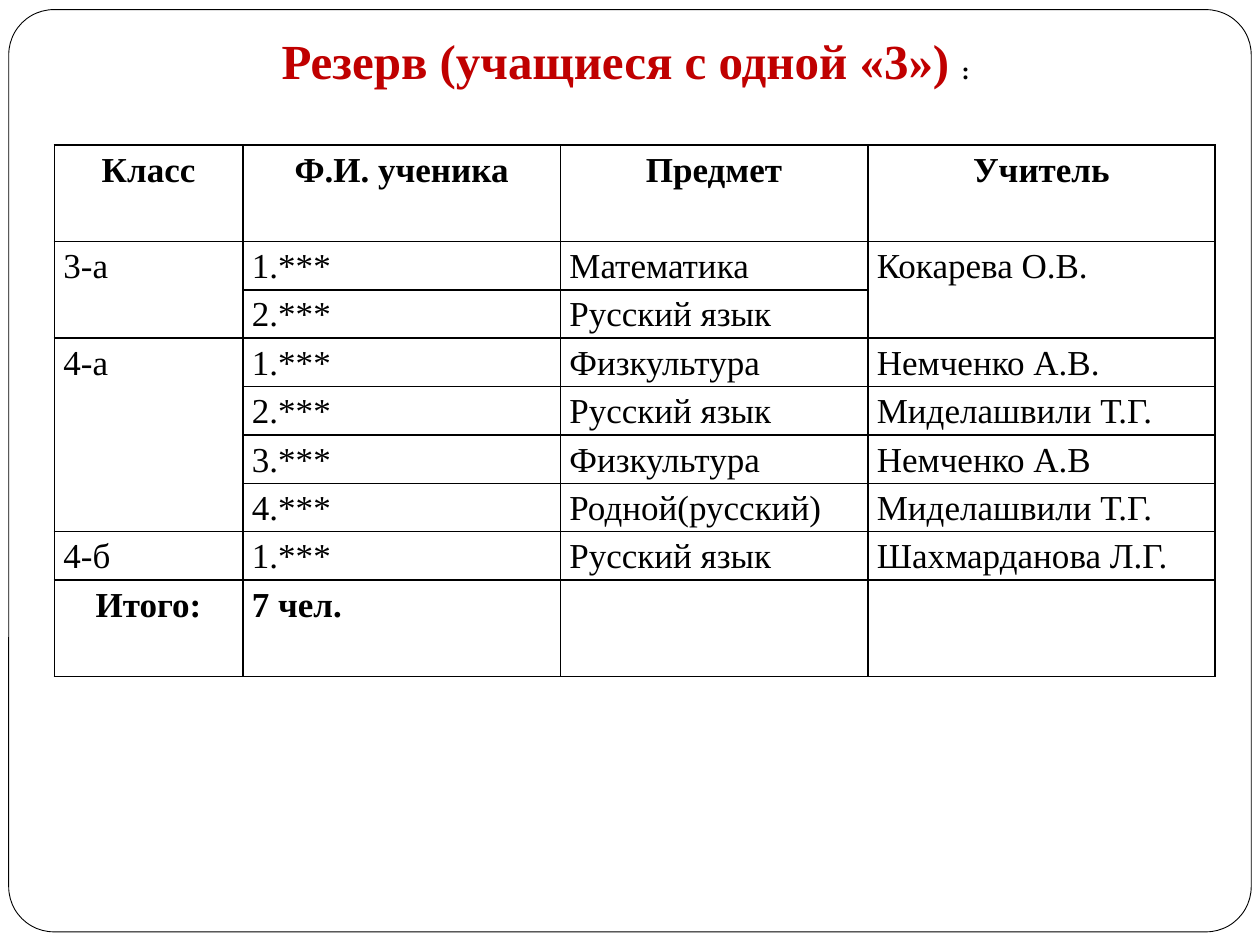
from typing import NamedTuple

from lxml import etree
from pptx import Presentation
from pptx import util as u
from pptx.dml.color import RGBColor
from pptx.enum import shapes, text
from pptx.oxml.ns import qn

FONT = "Times New Roman"
COLORS = {"ink": "000000", "title": "C00000", "paper": "FFFFFF"}
COL_WIDTHS = (107.8, 181.4, 175.7, 198.5)
ROW_H, TALL_ROW_H = 27.65, 55.2


class Row(NamedTuple):
    group: str
    pupil: str
    subject: str
    teacher: str
    bold: bool = False


class Span(NamedTuple):
    col: int
    first: int
    last: int


ROWS = (
    Row("Класс", "Ф.И. ученика", "Предмет", "Учитель", bold=True),
    Row("3-а", "1.***", "Математика", "Кокарева О.В."),
    Row("", "2.***", "Русский язык", ""),
    Row("4-а", "1.***", "Физкультура", "Немченко А.В."),
    Row("", "2.***", "Русский язык", "Миделашвили Т.Г."),
    Row("", "3.***", "Физкультура", "Немченко А.В"),
    Row("", "4.***", "Родной(русский)", "Миделашвили Т.Г."),
    Row("4-б", "1.***", "Русский язык", "Шахмарданова Л.Г."),
    Row("Итого:", "7 чел.", "", "", bold=True),
)
SPANS = (Span(0, 1, 2), Span(3, 1, 2), Span(0, 3, 6))


def rgb(name: str) -> RGBColor:
    return RGBColor.from_string(COLORS[name])


def add_run(p, content: str, size: float = 20, bold: bool = False, color: str = "ink") -> None:
    r = p.add_run()
    r.text = content
    r.font.name = FONT
    r.font.size = u.Pt(size)
    r.font.bold = bold
    r.font.color.rgb = rgb(color)


def add_borders(cell, width: float = 1) -> None:
    tc_pr = cell._tc.get_or_add_tcPr()
    for side in ("a:lnL", "a:lnR", "a:lnT", "a:lnB"):
        ln = etree.SubElement(tc_pr, qn(side), w=str(u.Pt(width)))
        fill = etree.SubElement(ln, qn("a:solidFill"))
        etree.SubElement(fill, qn("a:srgbClr"), val=COLORS["ink"])


def fill_cell(cell, content: str, bold: bool, centered: bool) -> None:
    cell.margin_left = cell.margin_right = u.Pt(5.2)
    cell.margin_top = cell.margin_bottom = 0
    add_borders(cell)
    cell.fill.background()
    p = cell.text_frame.paragraphs[0]
    p.line_spacing = 1.15
    p.alignment = text.PP_ALIGN.CENTER if centered else text.PP_ALIGN.LEFT
    if content:
        add_run(p, content, bold=bold)


def add_frame(s) -> None:
    sp = s.shapes.add_shape(shapes.MSO_SHAPE.ROUNDED_RECTANGLE,
                            u.Pt(5), u.Pt(5.5), u.Pt(710), u.Pt(527))
    sp.adjustments[0] = 0.049
    sp.shadow.inherit = False
    sp.fill.solid()
    sp.fill.fore_color.rgb = rgb("paper")
    sp.line.color.rgb = rgb("ink")
    sp.line.width = u.Pt(0.5)


def add_title(s) -> None:
    tf = s.shapes.add_textbox(u.Pt(150.5), u.Pt(13.7), u.Pt(414), u.Pt(41)).text_frame
    tf.word_wrap = False
    tf.auto_size = text.MSO_AUTO_SIZE.SHAPE_TO_FIT_TEXT
    tf.vertical_anchor = text.MSO_ANCHOR.MIDDLE
    p = tf.paragraphs[0]
    p.alignment = text.PP_ALIGN.CENTER
    add_run(p, "Резерв (учащиеся с одной «3») ", size=28, bold=True, color="title")
    add_run(p, ":", size=14, bold=True)


def add_pupil_table(s) -> None:
    heights = [TALL_ROW_H if row.bold else ROW_H for row in ROWS]
    table = s.shapes.add_table(len(ROWS), len(COL_WIDTHS), u.Pt(31), u.Pt(82.8),
                               u.Pt(sum(COL_WIDTHS)), u.Pt(sum(heights))).table
    table.first_row = table.horz_banding = False
    for column, width in zip(table.columns, COL_WIDTHS):
        column.width = u.Pt(width)
    for i, (row, height) in enumerate(zip(ROWS, heights)):
        table.rows[i].height = u.Pt(height)
        for j, content in enumerate(row[:4]):
            centered = i == 0 or (row.bold and j == 0)
            fill_cell(table.cell(i, j), content, row.bold, centered)
    for span in SPANS:
        table.cell(span.first, span.col).merge(table.cell(span.last, span.col))


def main() -> None:
    prs = Presentation()
    prs.slide_width, prs.slide_height = u.Pt(720), u.Pt(540)
    s = prs.slides.add_slide(prs.slide_layouts[6])
    add_frame(s)
    add_title(s)
    add_pupil_table(s)
    prs.save("out.pptx")


if __name__ == "__main__":
    main()
